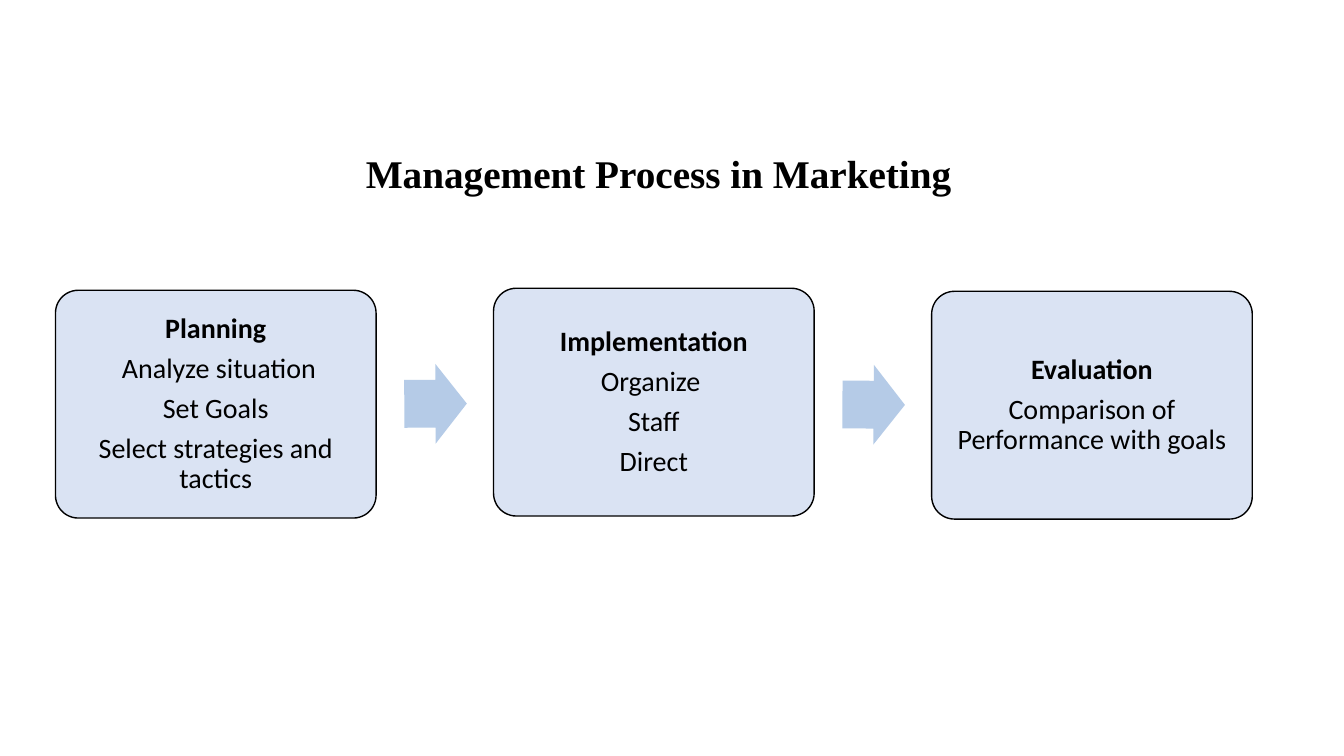
from dataclasses import dataclass

import pptx
import pptx.dml.color
import pptx.enum.shapes
import pptx.enum.text
import pptx.util

Inches = pptx.util.Inches
Pt = pptx.util.Pt
MSO_SHAPE = pptx.enum.shapes.MSO_SHAPE


@dataclass(frozen=True)
class Theme:
    ink: str = "000000"
    card: str = "DAE3F3"
    arrow: str = "B5CBE7"
    title_font: str = "Times New Roman"
    body_font: str = "Calibri"
    title_size: int = 28
    body_size: int = 20
    paragraph_gap: int = 7
    line_spacing: float = 0.9


@dataclass(frozen=True)
class Stage:
    heading: str
    steps: tuple[str, ...]
    top: float


@dataclass(frozen=True)
class Arrow:
    top: float
    rotation: float


THEME = Theme()
STAGES = (
    Stage("Planning", (" Analyze situation", "Set Goals", "Select strategies and tactics"), 2.88),
    Stage("Implementation", ("Organize ", "Staff", "Direct"), 2.86),
    Stage("Evaluation", ("Comparison of Performance with goals",), 2.89),
)
ARROWS = (Arrow(3.61, 359.7), Arrow(3.62, 0.4))

STAGE_LEFT, ARROW_LEFT, PITCH = 0.55, 4.01, 4.345
STAGE_WIDTH, STAGE_HEIGHT = 3.18, 2.26
ARROW_WIDTH, ARROW_HEIGHT = 0.62, 0.79
STAGE_MARGIN = 0.08


def rgb(value: str) -> pptx.dml.color.RGBColor:
    return pptx.dml.color.RGBColor.from_string(value)


def format_paragraph(p, font: str, size: int, bold: bool) -> None:
    p.alignment = pptx.enum.text.PP_ALIGN.CENTER
    p.line_spacing = THEME.line_spacing
    for r in p.runs:
        r.font.name = font
        r.font.size = Pt(size)
        r.font.bold = bold
        r.font.color.rgb = rgb(THEME.ink)


def add_title(slide, text: str) -> None:
    sp = slide.shapes.add_textbox(Inches(0.83), Inches(1.29), Inches(11.5), Inches(0.91))
    tf = sp.text_frame
    tf.word_wrap = True
    tf.vertical_anchor = pptx.enum.text.MSO_ANCHOR.MIDDLE
    tf.text = text
    format_paragraph(tf.paragraphs[0], THEME.title_font, THEME.title_size, True)


def add_stage(slide, stage: Stage, left: float) -> None:
    sp = slide.shapes.add_shape(
        MSO_SHAPE.ROUNDED_RECTANGLE,
        Inches(left), Inches(stage.top), Inches(STAGE_WIDTH), Inches(STAGE_HEIGHT),
    )
    sp.adjustments[0] = 0.1
    sp.shadow.inherit = False
    sp.fill.solid()
    sp.fill.fore_color.rgb = rgb(THEME.card)
    sp.line.color.rgb = rgb(THEME.ink)
    sp.line.width = Pt(1)

    tf = sp.text_frame
    tf.word_wrap = True
    tf.vertical_anchor = pptx.enum.text.MSO_ANCHOR.MIDDLE
    tf.margin_left = tf.margin_right = Inches(STAGE_MARGIN)
    tf.margin_top = tf.margin_bottom = Inches(STAGE_MARGIN)
    tf.text = "\n".join((stage.heading, *stage.steps))
    for i, p in enumerate(tf.paragraphs):
        format_paragraph(p, THEME.body_font, THEME.body_size, i == 0)
        p.space_after = Pt(THEME.paragraph_gap)


def add_arrow(slide, arrow: Arrow, left: float) -> None:
    sp = slide.shapes.add_shape(
        MSO_SHAPE.RIGHT_ARROW,
        Inches(left), Inches(arrow.top), Inches(ARROW_WIDTH), Inches(ARROW_HEIGHT),
    )
    sp.adjustments[0] = 0.6
    sp.adjustments[1] = 0.5
    sp.rotation = arrow.rotation
    sp.shadow.inherit = False
    sp.fill.solid()
    sp.fill.fore_color.rgb = rgb(THEME.arrow)
    sp.line.fill.background()


def main() -> None:
    prs = pptx.Presentation()
    prs.slide_width = Inches(13.33)
    prs.slide_height = Inches(7.5)
    slide = prs.slides.add_slide(prs.slide_layouts[6])

    add_title(slide, "Management Process in Marketing ")
    for i, stage in enumerate(STAGES):
        add_stage(slide, stage, STAGE_LEFT + i * PITCH)
    for i, arrow in enumerate(ARROWS):
        add_arrow(slide, arrow, ARROW_LEFT + i * PITCH)

    prs.save("out.pptx")


if __name__ == "__main__":
    main()
